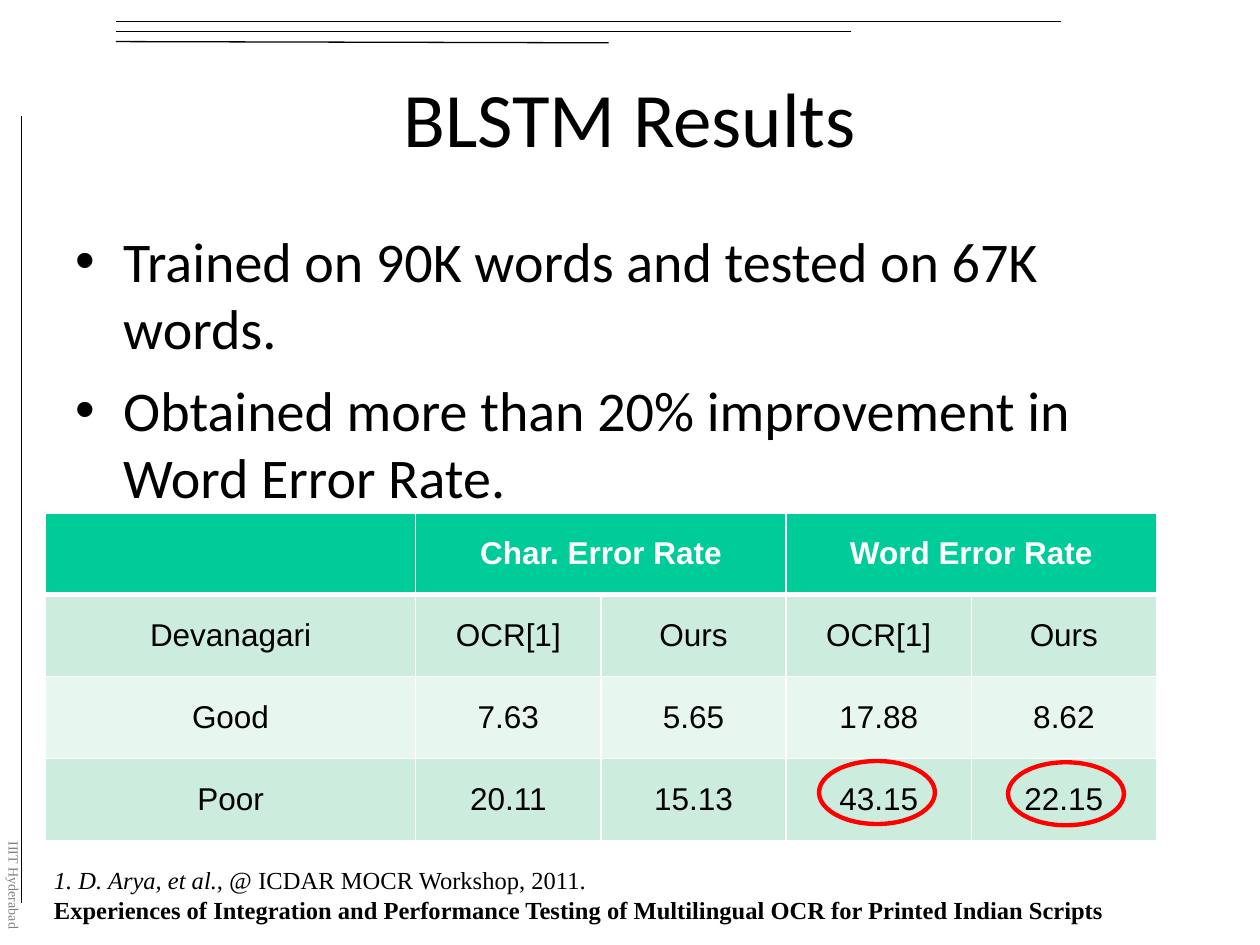
from lxml.etree import SubElement
from pptx import Presentation
from pptx.dml.color import RGBColor
from pptx.enum.shapes import MSO_CONNECTOR, MSO_SHAPE
from pptx.enum.text import MSO_ANCHOR, PP_ALIGN
from pptx.oxml.ns import qn
from pptx.util import Inches, Pt

COLORS = {"ink": "000000", "white": "FFFFFF", "gray": "808080", "header": "00CC99",
          "band": "CCECDE", "pale": "E7F6EF", "red": "FF0000"}

# Content
TITLE = "BLSTM Results"
BULLETS = ["Trained on 90K words and tested on 67K words.",
           "Obtained more than 20% improvement in Word Error Rate."]
ROWS = [["", "Char. Error Rate", "", "Word Error Rate", ""],
        ["Devanagari", "OCR[1]", "Ours", "OCR[1]", "Ours"],
        ["Good", "7.63", "5.65", "17.88", "8.62"],
        ["Poor", "20.11", "15.13", "43.15", "22.15"]]
ROW_FILLS = ["header", "band", "pale", "band"]
COLUMN_WIDTHS = [2.94, 1.47, 1.47, 1.47, 1.47]
ROW_HEIGHT = 0.65
# Each span: wording, bold, italic
REFERENCE = [[("1. D. Arya, et al., @ ", False, True),
              ("ICDAR MOCR Workshop, 2011.", False, False)],
             [("Experiences of Integration and Performance Testing of "
               "Multilingual OCR for Printed Indian Scripts", True, False)]]
SIDE_LABEL = "IIIT Hyderabad"
RULES = [(0.92, 0.17, 8.42, 0.17), (0.92, 0.25, 6.75, 0.25),
         (0.92, 0.33, 4.83, 0.34), (0.17, 0.92, 0.17, 7.17)]
CIRCLES = [(6.5, 6.04, 0.92, 0.5), (8, 6.05, 0.92, 0.5)]


def color(name):
    return RGBColor.from_string(COLORS[name])


def add_span(para, text, size, font, ink="ink", bold=False, italic=False):
    span = para.add_run()
    span.text = text
    span.font.size = Pt(size)
    span.font.name = font
    span.font.color.rgb = color(ink)
    span.font.bold = bold
    span.font.italic = italic


def add_box(page, left, top, width, height):
    box = page.shapes.add_textbox(*map(Inches, (left, top, width, height)))
    box.text_frame.word_wrap = True
    return box.text_frame


def next_para(frame, index):
    return frame.add_paragraph() if index else frame.paragraphs[0]


def add_bullet(para):
    props = para._p.get_or_add_pPr()
    props.set("marL", str(Inches(0.38)))
    props.set("indent", str(Inches(-0.38)))
    SubElement(props, qn("a:buFont"), typeface="Arial")
    SubElement(props, qn("a:buChar"), char="•")


def add_borders(cell, widths):
    props = cell._tc.get_or_add_tcPr()
    for side, points in widths.items():
        line = SubElement(props, qn(f"a:ln{side}"), w=str(Pt(points)))
        fill = SubElement(line, qn("a:solidFill"))
        SubElement(fill, qn("a:srgbClr"), val=COLORS["white"])


def add_results(page):
    frame = page.shapes.add_table(
        len(ROWS), len(COLUMN_WIDTHS), Inches(0.36), Inches(4.07),
        Inches(sum(COLUMN_WIDTHS)), Inches(ROW_HEIGHT * len(ROWS)))
    table = frame.table
    for column, width in zip(table.columns, COLUMN_WIDTHS):
        column.width = Inches(width)
    for r, (texts, fill) in enumerate(zip(ROWS, ROW_FILLS)):
        table.rows[r].height = Inches(ROW_HEIGHT)
        header = r == 0
        for c, text in enumerate(texts):
            cell = table.cell(r, c)
            add_borders(cell, {"L": 1, "R": 1, "T": 3 if r == 1 else 1,
                               "B": 3 if header else 1})
            cell.fill.solid()
            cell.fill.fore_color.rgb = color(fill)
            cell.vertical_anchor = MSO_ANCHOR.MIDDLE
            para = cell.text_frame.paragraphs[0]
            para.alignment = PP_ALIGN.CENTER
            if text:
                add_span(para, text, 18, "Arial", "white" if header else "ink", header)
    for c in (1, 3):
        table.cell(0, c).merge(table.cell(0, c + 1))


def main():
    deck = Presentation()
    deck.slide_width, deck.slide_height = Inches(10), Inches(7.5)
    page = deck.slides.add_slide(deck.slide_layouts[6])

    # Decorative rules
    for ends in RULES:
        rule = page.shapes.add_connector(MSO_CONNECTOR.STRAIGHT, *map(Inches, ends))
        rule.line.color.rgb = color("ink")
        rule.line.width = Pt(0.75)
        SubElement(rule._element.spPr, qn("a:effectLst"))

    # Vertical side label
    label = add_box(page, -0.1, 6.58, 0.33, 0.92)
    label._txBody.bodyPr.set("vert", "eaVert")
    add_span(label.paragraphs[0], SIDE_LABEL, 8, "Times New Roman", "gray")

    # Title
    title = add_box(page, 0.5, 0.14, 9, 1.57)
    title.vertical_anchor = MSO_ANCHOR.MIDDLE
    title.paragraphs[0].alignment = PP_ALIGN.CENTER
    add_span(title.paragraphs[0], TITLE, 44, "Calibri")

    # Bullets
    body = add_box(page, 0.5, 1.75, 9, 5.79)
    for index, text in enumerate(BULLETS):
        para = next_para(body, index)
        add_bullet(para)
        if index:
            para.space_before = Pt(8)
        add_span(para, text, 32, "Calibri")

    # Reference
    reference = add_box(page, 0.33, 6.82, 9.92, 0.57)
    for index, spans in enumerate(REFERENCE):
        para = next_para(reference, index)
        for text, bold, italic in spans:
            add_span(para, text, 14, "Times New Roman", bold=bold, italic=italic)

    # Results table and the circles around its key values
    add_results(page)
    for place in CIRCLES:
        circle = page.shapes.add_shape(MSO_SHAPE.OVAL, *map(Inches, place))
        circle.shadow.inherit = False
        circle.fill.background()
        circle.line.color.rgb = color("red")
        circle.line.width = Pt(2.5)

    deck.save("out.pptx")


if __name__ == "__main__":
    main()
